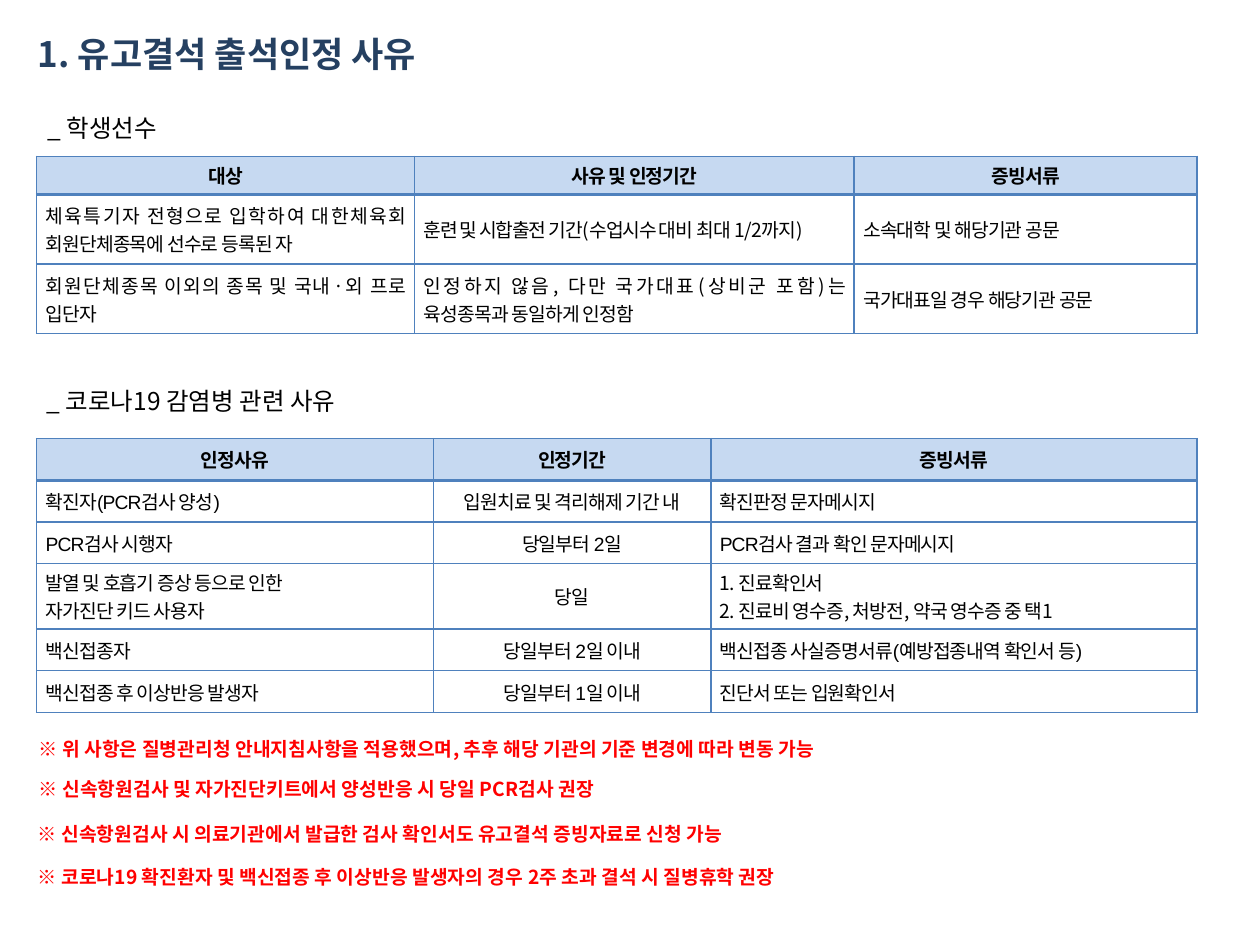
from lxml.etree import SubElement
from pptx import Presentation
from pptx.dml.color import RGBColor
from pptx.enum.text import MSO_ANCHOR as Anchor, MSO_AUTO_SIZE as AutoSize, PP_ALIGN as Align
from pptx.oxml.ns import qn
from pptx.util import Cm, Pt

COLORS = {"title": "254061", "text": "000000", "note": "FF0000",
          "border": "4F81BD", "header": "C6D9F1"}
KOREAN, LATIN = "Noto Sans CJK KR", "Arial"
FRAME = {"word_wrap": True, "auto_size": AutoSize.SHAPE_TO_FIT_TEXT, "vertical_anchor": Anchor.TOP}
CELL = {"vertical_anchor": Anchor.MIDDLE, "margin_left": Cm(0.18), "margin_right": Cm(0.18),
        "margin_top": Cm(0.05), "margin_bottom": Cm(0.05)}


def write(paragraph, text, size, color, bold=False, latin=KOREAN, spacing=None):
    run = paragraph.add_run()
    run.text = text
    for key, value in {"size": Pt(size), "bold": bold, "name": latin}.items():
        setattr(run.font, key, value)
    run.font.color.rgb = RGBColor.from_string(COLORS[color])
    props = run.font._element
    SubElement(props, qn("a:ea"), typeface=KOREAN)
    if spacing is not None:
        props.set("spc", str(spacing))


def draw_border(cell, side, points):
    line = SubElement(cell._tc.get_or_add_tcPr(), qn(f"a:ln{side}"), w=str(Pt(points)))
    fill = SubElement(line, qn("a:solidFill"))
    SubElement(fill, qn("a:srgbClr"), val=COLORS["border"])


prs = Presentation()
prs.slide_width, prs.slide_height = Cm(25.4), Cm(19.05)
slide = prs.slides.add_slide(prs.slide_layouts[5])

# Title
title = slide.shapes.title
title.left, title.top, title.width, title.height = Cm(0.51), Cm(0.53), Cm(8.99), Cm(1.12)
for key, value in FRAME.items():
    setattr(title.text_frame, key, value)
heading = title.text_frame.paragraphs[0]
heading.alignment = Align.LEFT
write(heading, "1. 유고결석 출석인정 사유", 20, "title", bold=True)

# Section headings and notes: left, top, width, height, size, colour, bold, text
lines = [
    (0.71, 2.16, 2.9, 0.86, 14, "text", False, "_ 학생선수"),
    (0.69, 7.65, 6.96, 0.86, 14, "text", False, "_ 코로나19 감염병 관련 사유"),
    (0.53, 14.73, 18.75, 1.24, 11, "note", True,
     "※ 위 사항은 질병관리청 안내지침사항을 적용했으며, 추후 해당 기관의 기준 변경에 따라 변동 가능"),
    (0.53, 15.54, 16.33, 0.74, 11, "note", True,
     "※ 신속항원검사 및 자가진단키트에서 양성반응 시 당일 PCR검사 권장"),
    (0.51, 16.46, 16.33, 0.74, 11, "note", True,
     "※ 신속항원검사 시 의료기관에서 발급한 검사 확인서도 유고결석 증빙자료로 신청 가능"),
    (0.51, 17.32, 17.15, 0.74, 11, "note", True,
     "※ 코로나19 확진환자 및 백신접종 후 이상반응 발생자의 경우 2주 초과 결석 시 질병휴학 권장"),
]
for left, top, width, height, size, color, bold, text in lines:
    frame = slide.shapes.add_textbox(Cm(left), Cm(top), Cm(width), Cm(height)).text_frame
    for key, value in FRAME.items():
        setattr(frame, key, value)
    write(frame.paragraphs[0], text, size, color, bold)

# Table contents: a cell is text, or a list of (text, letter spacing) runs
athletes = [
    ["대상", "사유 및 인정기간", "증빙서류"],
    ["체육특기자 전형으로 입학하여 대한체육회 회원단체종목에 선수로 등록된 자",
     [("훈련 및 시합출전 기간(수업시수 대비", -70), (" 최대 1/2까지)", -50)],
     "소속대학 및 해당기관 공문"],
    ["회원단체종목 이외의 종목 및 국내·외 프로 입단자",
     [("인정하지 않음, 다만 국가대표(상비군", -60), (" 포함)는 육성종목과 동일하게 인정함", -50)],
     "국가대표일 경우 해당기관 공문"],
]
infections = [
    ["인정사유", "인정기간", "증빙서류"],
    ["확진자(PCR검사 양성)", "입원치료 및 격리해제 기간 내", "확진판정 문자메시지"],
    ["PCR검사 시행자", "당일부터 2일", "PCR검사 결과 확인 문자메시지"],
    ["발열 및 호흡기 증상 등으로 인한\n자가진단 키드 사용자", "당일",
     "1. 진료확인서\n2. 진료비 영수증, 처방전, 약국 영수증 중 택1"],
    ["백신접종자", "당일부터 2일 이내", "백신접종 사실증명서류(예방접종내역 확인서 등)"],
    ["백신접종 후 이상반응 발생자", "당일부터 1일 이내", "진단서 또는 입원확인서"],
]

# Tables: top, column widths, row heights, column alignments, body font, contents
tables = [
    (3.15, [7.62, 8.86, 6.91], [0.77, 1.4, 1.4], [Align.JUSTIFY] * 3, KOREAN, athletes),
    (8.84, [8, 5.59, 9.8], [0.84, 0.84, 0.84, 1.32, 0.84, 0.84],
     [Align.JUSTIFY, Align.CENTER, Align.JUSTIFY], LATIN, infections),
]
for top, widths, heights, alignments, body_font, contents in tables:
    table = slide.shapes.add_table(len(heights), len(widths), Cm(0.74), Cm(top),
                                   Cm(sum(widths)), Cm(sum(heights))).table
    table.horz_banding = False
    for column, width in zip(table.columns, widths):
        column.width = Cm(width)
    for r, (height, row) in enumerate(zip(heights, contents)):
        table.rows[r].height = Cm(height)
        is_header = r == 0
        for c, content in enumerate(row):
            cell = table.cell(r, c)
            for key, value in CELL.items():
                setattr(cell, key, value)

            # Borders, with a thicker rule under the header
            for side in "LRTB":
                draw_border(cell, side, 2 if (r, side) in [(0, "B"), (1, "T")] else 1)
            if is_header:
                cell.fill.solid()
                cell.fill.fore_color.rgb = RGBColor.from_string(COLORS["header"])
            else:
                cell.fill.background()

            # Text
            if isinstance(content, str):
                paragraphs = [[(line, -50)] for line in content.split("\n")]
            else:
                paragraphs = [content]
            numbered = content[:2] == "1."
            latin = KOREAN if is_header or numbered else body_font
            for i, runs in enumerate(paragraphs):
                paragraph = cell.text_frame.add_paragraph() if i else cell.text_frame.paragraphs[0]
                paragraph.alignment = Align.CENTER if is_header else alignments[c]
                for text, spacing in runs:
                    write(paragraph, text, 11, "text", is_header, latin, spacing)

prs.save("out.pptx")
